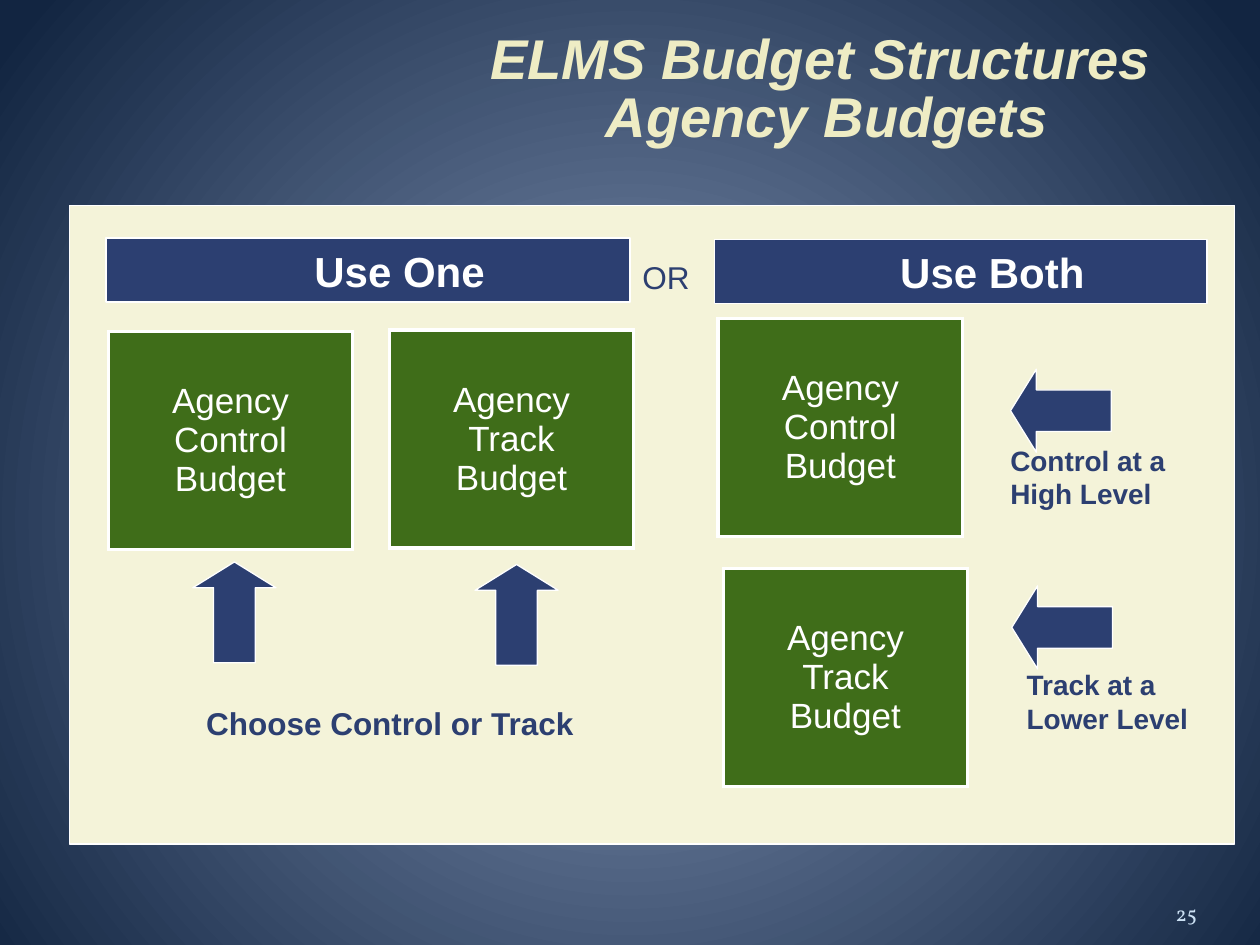
from lxml.etree import SubElement
from pptx import Presentation
from pptx.dml.color import RGBColor
from pptx.enum.shapes import MSO_SHAPE
from pptx.enum.text import MSO_ANCHOR, PP_ALIGN
from pptx.oxml import parse_xml
from pptx.oxml.ns import nsdecls, qn
from pptx.util import Inches, Pt

NAVY = RGBColor(0x2C, 0x3F, 0x71)
GREEN = RGBColor(0x3F, 0x6D, 0x19)
CREAM = RGBColor(0xF4, 0xF3, 0xD9)
TITLE = RGBColor(0xEE, 0xEC, 0xC4)
PALE_BLUE = RGBColor(0xCC, 0xE1, 0xF4)
WHITE = RGBColor(0xFF, 0xFF, 0xFF)

BACKGROUND_STOPS = [(0, "51DAFF"), (7, "7B85B3"), (14, "7386A7"), (100, "122541")]
PANEL = (0.55, 1.63, 9.25, 5.07)
TITLES = [
    ("ELMS Budget Structures", (3.12, 0.09, 6.78, 0.68)),
    ("Agency Budgets", (3.18, 0.65, 6.77, 0.58)),
]
HEADERS = [
    ("Use One", (0.84, 1.89, 4.16, 0.51)),
    ("Use Both", (5.67, 1.9, 3.91, 0.51)),
]
BUDGET_SIZE = (1.94, 1.73)
BUDGETS = [
    ("Control", (0.86, 2.63)),
    ("Control", (5.7, 2.53)),
    ("Track", (3.09, 2.62)),
    ("Track", (5.74, 4.51)),
]
ARROW_SIZE = (0.66, 0.8)
ARROWS = [
    (90, (8.09, 2.86)),
    (90, (8.1, 4.58)),
    (180, (1.53, 4.46)),
    (180, (3.77, 4.48)),
]
CAPTIONS = [
    ("Control at a High Level", (7.92, 3.47, 1.59, 0.64), 16, True, PP_ALIGN.LEFT),
    ("Track at a Lower Level", (8.05, 5.25, 1.59, 0.64), 16, True, PP_ALIGN.LEFT),
    ("Choose Control or Track", (0.96, 5.54, 4.27, 0.4), 18, True, PP_ALIGN.CENTER),
    ("OR", (5, 2, 0.67, 0.4), 18, False, PP_ALIGN.LEFT),
]


def inches(lengths):
    return [Inches(length) for length in lengths]


def write(frame, text, size, color, align=PP_ALIGN.CENTER, bold=False, italic=False, name="Arial"):
    frame.word_wrap = True
    paragraph = frame.paragraphs[0]
    paragraph.text = text
    paragraph.alignment = align
    font = paragraph.font
    font.name, font.size, font.bold, font.italic = name, Pt(size), bold, italic
    font.color.rgb = color


def add_text(page, text, area, size, color, anchor=MSO_ANCHOR.TOP, **style):
    frame = page.shapes.add_textbox(*inches(area)).text_frame
    frame.vertical_anchor = anchor
    write(frame, text, size, color, **style)
    return frame


def add_block(page, kind, area, fill, line_width=0.75):
    shape = page.shapes.add_shape(kind, *inches(area))
    shape.shadow.inherit = False
    shape.fill.solid()
    shape.fill.fore_color.rgb = fill
    shape.line.color.rgb = WHITE
    shape.line.width = Pt(line_width)
    return shape


def add_budget(page, kind, corner):
    table = page.shapes.add_table(1, 1, *inches(corner + BUDGET_SIZE)).table
    cell = table.cell(0, 0)
    cell.vertical_anchor = MSO_ANCHOR.MIDDLE
    write(cell.text_frame, f"Agency\v{kind}\vBudget", 20, WHITE)
    properties = cell._tc.get_or_add_tcPr()
    for side in ("lnL", "lnR", "lnT", "lnB"):
        border = SubElement(properties, qn(f"a:{side}"), w=str(Pt(2.25)))
        fill = SubElement(border, qn("a:solidFill"))
        SubElement(fill, qn("a:srgbClr"), val=str(WHITE))
    cell.fill.solid()
    cell.fill.fore_color.rgb = GREEN


def set_background(page):
    stops = "".join(
        f'<a:gs pos="{share * 1000}"><a:srgbClr val="{color}"/></a:gs>'
        for share, color in BACKGROUND_STOPS
    )
    background = parse_xml(
        f'<p:bg {nsdecls("p", "a")}><p:bgPr><a:gradFill><a:gsLst>{stops}</a:gsLst>'
        '<a:path path="circle"><a:fillToRect l="10000" t="110000" r="10000" b="100000"/></a:path>'
        "</a:gradFill><a:effectLst/></p:bgPr></p:bg>"
    )
    page._element.cSld.insert(0, background)


def main():
    deck = Presentation()
    deck.slide_width, deck.slide_height = Inches(10), Inches(7.5)
    page = deck.slides.add_slide(deck.slide_layouts[6])
    set_background(page)

    number = add_text(page, "25", (8.67, 6.95, 0.83, 0.4), 12, PALE_BLUE,
                      MSO_ANCHOR.BOTTOM, align=PP_ALIGN.RIGHT, name="Vollkorn")
    number.margin_left = number.margin_right = 0
    number.margin_top = number.margin_bottom = 0

    add_block(page, MSO_SHAPE.RECTANGLE, PANEL, CREAM)
    for text, area in TITLES:
        add_text(page, text, area, 32, TITLE, MSO_ANCHOR.BOTTOM, bold=True, italic=True)
    for text, area in HEADERS:
        header = add_block(page, MSO_SHAPE.RECTANGLE, area, NAVY, 1)
        header.text_frame.margin_left = Inches(0.6)
        write(header.text_frame, text, 24, WHITE, bold=True)
    for kind, corner in BUDGETS:
        add_budget(page, kind, corner)
    for angle, corner in ARROWS:
        arrow = add_block(page, MSO_SHAPE.DOWN_ARROW, corner + ARROW_SIZE, NAVY)
        arrow.adjustments[0], arrow.adjustments[1] = 0.5, 0.31
        arrow.rotation = angle
    for text, area, size, bold, align in CAPTIONS:
        add_text(page, text, area, size, NAVY, bold=bold, align=align)

    deck.save("out.pptx")


if __name__ == "__main__":
    main()
